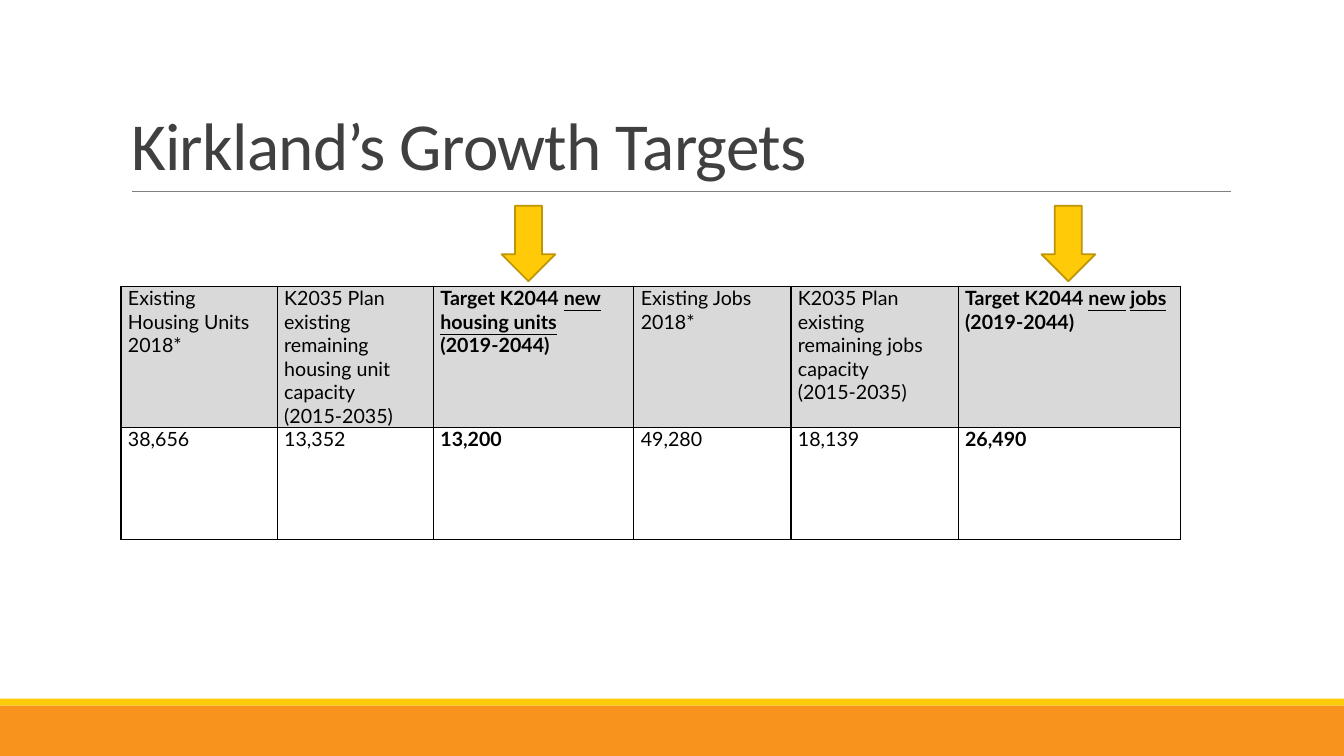
from pptx import Presentation
from pptx.dml.color import RGBColor
from pptx.enum.shapes import MSO_CONNECTOR as CONNECTOR, MSO_SHAPE as SHAPE
from pptx.enum.text import MSO_ANCHOR as ANCHOR, PP_ALIGN as ALIGN
from pptx.oxml.ns import qn
from pptx.util import Pt
from lxml.etree import SubElement

COLORS = {
    "title": "404040", "rule": "808080", "text": "000000", "header": "D9D9D9",
    "yellow": "FFCA08", "yellow_edge": "BD9506", "orange": "F8931D",
}
WIDTH, HEIGHT = 960, 540
COLUMN_WIDTHS = [111.6, 111.6, 143.2, 112.2, 119.4, 159]
ROW_HEIGHTS = [100.8, 79.9]
# Underscores enclose underlined words; line breaks separate paragraphs.
TARGETS = [
    ("Existing Housing Units 2018*", "38,656"),
    ("K2035 Plan existing remaining housing unit capacity\n(2015-2035)", "13,352"),
    ("Target K2044 _new_ _housing units_\n(2019-2044)", "13,200"),
    ("Existing Jobs 2018*", "49,280"),
    ("K2035 Plan existing remaining jobs capacity\n(2015-2035)", "18,139"),
    ("Target K2044 _new_ _jobs_\n(2019-2044)", "26,490"),
]
TARGET_COLUMNS = (2, 5)


def rgb(name):
    return RGBColor.from_string(COLORS[name])


def write(frame, text, *, font, size, color, bold=False, line_spacing=1.0,
          letter_spacing=0):
    """Fill a text frame, underlining the words between underscores."""
    for i, line in enumerate(text.split("\n")):
        paragraph = frame.add_paragraph() if i else frame.paragraphs[0]
        paragraph.alignment = ALIGN.LEFT
        paragraph.line_spacing = line_spacing
        for j, words in enumerate(line.split("_")):
            if not words:
                continue
            run = paragraph.add_run()
            run.text = words
            run.font.name, run.font.size, run.font.bold = font, Pt(size), bold
            run.font.underline = j % 2 == 1
            run.font.color.rgb = rgb(color)
            if letter_spacing:
                run.font._element.set("spc", str(round(letter_spacing * 100)))


def add_block(slide, preset, left, top, width, height, fill, edge=None):
    block = slide.shapes.add_shape(preset, Pt(left), Pt(top), Pt(width), Pt(height))
    block.shadow.inherit = False
    block.fill.solid()
    block.fill.fore_color.rgb = rgb(fill)
    if edge:
        block.line.color.rgb = rgb(edge)
        block.line.width = Pt(1.25)
    else:
        block.line.fill.background()


def add_footer_bands(slide, left, top, width, height):
    stripe = 5
    add_block(slide, SHAPE.RECTANGLE, left, top + stripe, width, height - stripe, "orange")
    add_block(slide, SHAPE.RECTANGLE, left, top, width, stripe, "yellow")


def add_heading(slide, left, top, width, height):
    title = slide.shapes.title
    title.left, title.top, title.width, title.height = map(Pt, (left, top, width, height))
    title.text_frame.vertical_anchor = ANCHOR.BOTTOM
    title.text_frame.word_wrap = True
    write(title.text_frame, "Kirkland’s Growth Targets", font="Calibri", size=48,
          color="title", line_spacing=0.85, letter_spacing=-0.5)
    rule_left, rule_top = left + 7.9, top + height + 1.4
    rule = slide.shapes.add_connector(CONNECTOR.STRAIGHT, Pt(rule_left), Pt(rule_top),
                                      Pt(rule_left + 784.8), Pt(rule_top))
    rule.line.color.rgb = rgb("rule")
    rule.line.width = Pt(0.5)
    SubElement(rule._element.spPr, qn("a:effectLst"))


def add_borders(cell):
    properties = cell._tc.get_or_add_tcPr()
    for side in "LRTB":
        border = SubElement(properties, qn(f"a:ln{side}"), w=str(Pt(1)))
        fill = SubElement(border, qn("a:solidFill"))
        SubElement(fill, qn("a:srgbClr"), val=COLORS["text"])


def add_targets_table(slide, left, top):
    table = slide.shapes.add_table(
        len(ROW_HEIGHTS), len(COLUMN_WIDTHS), Pt(left), Pt(top),
        Pt(sum(COLUMN_WIDTHS)), Pt(sum(ROW_HEIGHTS))).table
    table.first_row = table.horz_banding = False
    for row, height in zip(table.rows, ROW_HEIGHTS):
        row.height = Pt(height)
    for c, entries in enumerate(TARGETS):
        table.columns[c].width = Pt(COLUMN_WIDTHS[c])
        for r, entry in enumerate(entries):
            cell = table.cell(r, c)
            cell.margin_left = cell.margin_right = Pt(5)
            cell.margin_top = cell.margin_bottom = 0
            add_borders(cell)
            if r == 0:
                cell.fill.solid()
                cell.fill.fore_color.rgb = rgb("header")
            else:
                cell.fill.background()
            write(cell.text_frame, entry, font="Lato", size=14, color="text",
                  bold=c in TARGET_COLUMNS)


def add_target_arrows(slide, left, top):
    """Point at each target column of the table whose corner is given."""
    width, height, gap = 38.4, 54, 3.6
    for column, offset in zip(TARGET_COLUMNS, (67.9, 78.7)):
        center = left + sum(COLUMN_WIDTHS[:column]) + offset
        add_block(slide, SHAPE.DOWN_ARROW, center - width / 2, top - gap - height,
                  width, height, "yellow", edge="yellow_edge")


def build_growth_targets(deck):
    slide = deck.slides.add_slide(deck.slide_layouts[5])
    table_left, table_top = 86.4, 204.5
    add_footer_bands(slide, 0, HEIGHT - 41, WIDTH, 41)
    add_heading(slide, 86.4, 27.4, 792, 108)
    add_targets_table(slide, table_left, table_top)
    add_target_arrows(slide, table_left, table_top)


def main():
    deck = Presentation()
    deck.slide_width, deck.slide_height = Pt(WIDTH), Pt(HEIGHT)
    build_growth_targets(deck)
    deck.save("out.pptx")


if __name__ == "__main__":
    main()
